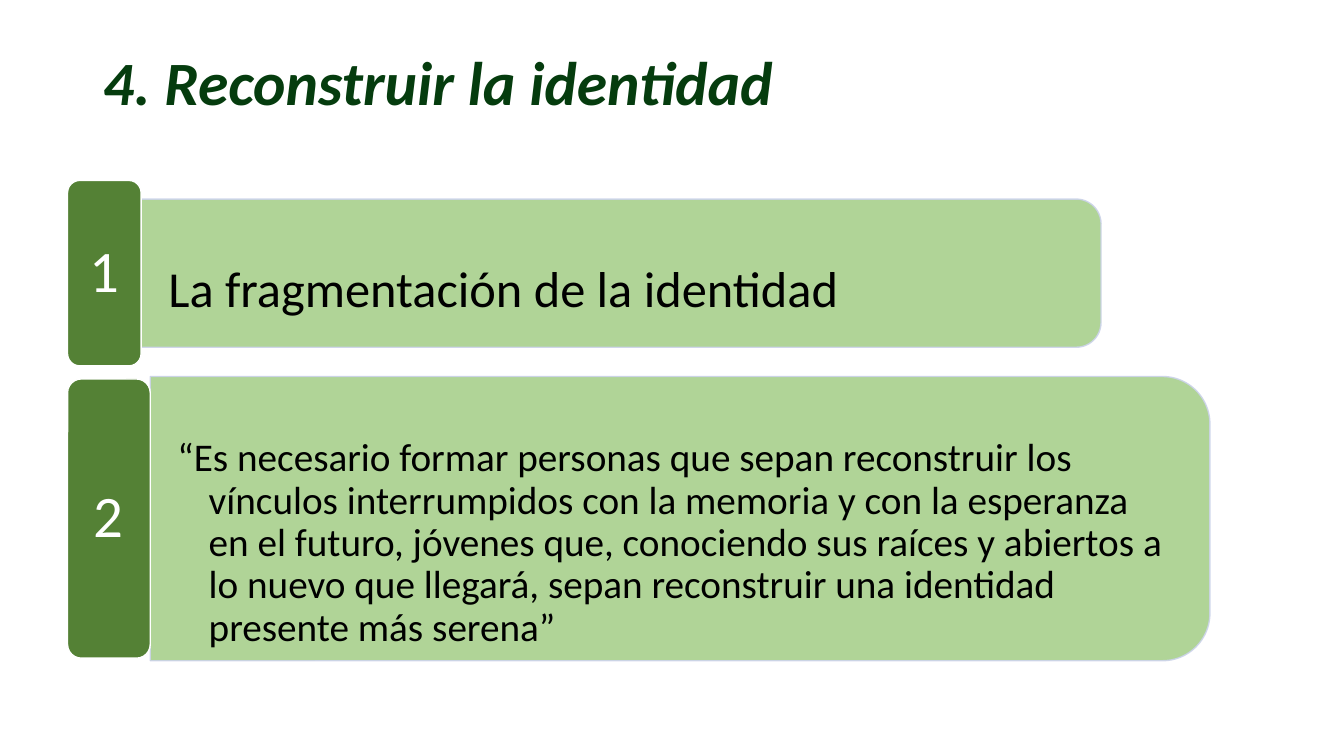
"""Build a slide on rebuilding identity: a title and two numbered panels."""
from lxml import etree
from pptx import Presentation
from pptx.dml.color import RGBColor
from pptx.enum import shapes, text
from pptx.oxml.ns import qn
from pptx.util import Inches, Pt

COLORS = {
    "title": "053C0E",
    "panel": "A8D08C",
    "edge": "CCD3EA",
    "badge": "548135",
    "white": "FFFFFF",
    "black": "000000",
}
FONT = "Calibri"
TITLE = "4. Reconstruir la identidad"
LEFT = 0.67
ROUNDING = 0.167
ROWS = [
    {
        "number": "1",
        "words": "La fragmentación de la identidad",
        "size": 36, "indent": 0.31, "drop": 0.18,
        "middle": 2.71, "badge": (0.73, 1.84), "panel": (9.52, 1.47),
    },
    {
        "number": "2",
        "words": "“Es necesario formar personas que sepan reconstruir los vínculos "
                 "interrumpidos con la memoria y con la esperanza en el futuro, "
                 "jóvenes que, conociendo sus raíces y abiertos a lo nuevo que "
                 "llegará, sepan reconstruir una identidad presente más serena”",
        "size": 28, "indent": 0.31, "drop": 0.25,
        "middle": 5.145, "badge": (0.82, 2.77), "panel": (10.51, 2.82),
    },
]


def color(name):
    return RGBColor.from_string(COLORS[name])


def write(shape, words, size, ink, align, anchor, insets):
    """Put one formatted run in a shape and return its paragraph."""
    frame = shape.text_frame
    frame.word_wrap = True
    frame.auto_size = text.MSO_AUTO_SIZE.NONE
    frame.vertical_anchor = anchor
    frame.margin_left = frame.margin_right = Inches(insets[0])
    frame.margin_top = frame.margin_bottom = Inches(insets[1])
    para = frame.paragraphs[0]
    para.alignment = align
    para.line_spacing = 0.9
    span = para.add_run()
    span.text = words
    span.font.name = FONT
    span.font.size = Pt(size)
    span.font.color.rgb = color(ink)
    return para


def add_block(page, preset, box, fill, edge):
    """Add a filled and outlined preset shape."""
    shape = page.shapes.add_shape(preset, *map(Inches, box))
    shape.shadow.inherit = False
    shape.adjustments[0] = ROUNDING
    shape.fill.solid()
    shape.fill.fore_color.rgb = color(fill)
    shape.line.color.rgb = color(edge)
    shape.line.width = Pt(1)
    return shape


def add_panel(page, row):
    """Add the pale panel, rounded on its right side, and its text."""
    width, height = row["panel"]
    left = LEFT + row["badge"][0]
    middle = row["middle"]
    turned = (left + (width - height) / 2, middle - width / 2, height, width)
    panel = add_block(page, shapes.MSO_SHAPE.ROUND_2_SAME_RECTANGLE,
                      turned, "panel", "edge")
    panel.rotation = 90
    for tint in panel._element.spPr.iter(qn("a:srgbClr")):
        etree.SubElement(tint, qn("a:alpha"), val="90000")

    corner = 0.29 * ROUNDING * height
    box = page.shapes.add_textbox(
        Inches(left), Inches(middle - height / 2 + corner + row["drop"]),
        Inches(width - corner), Inches(height - 2 * corner))
    para = write(box, row["words"], row["size"], "black", text.PP_ALIGN.LEFT,
                 text.MSO_ANCHOR.MIDDLE, (0.27, 0.14))
    props = para._p.get_or_add_pPr()
    props.set("marL", str(Inches(row["indent"])))
    props.set("indent", str(-Inches(row["indent"])))


def add_badge(page, row):
    """Add the dark numbered badge at the left of a panel."""
    width, height = row["badge"]
    badge = add_block(page, shapes.MSO_SHAPE.ROUNDED_RECTANGLE,
                      (LEFT, row["middle"] - height / 2, width, height),
                      "badge", "white")
    write(badge, row["number"], 42, "white", text.PP_ALIGN.CENTER,
          text.MSO_ANCHOR.MIDDLE, (0.1, 0.09))


def main():
    deck = Presentation()
    deck.slide_width, deck.slide_height = Inches(13.33), Inches(7.5)
    page = deck.slides.add_slide(deck.slide_layouts[5])

    title = page.shapes.title
    title.left, title.top = Inches(0.92), Inches(0.47)
    title.width, title.height = Inches(11.5), Inches(1.45)
    para = write(title, TITLE, 44, "title", text.PP_ALIGN.LEFT,
                 text.MSO_ANCHOR.TOP, (0.1, 0.05))
    para.runs[0].font.bold = para.runs[0].font.italic = True

    for row in ROWS:
        add_panel(page, row)
        add_badge(page, row)
    deck.save("out.pptx")


if __name__ == "__main__":
    main()
